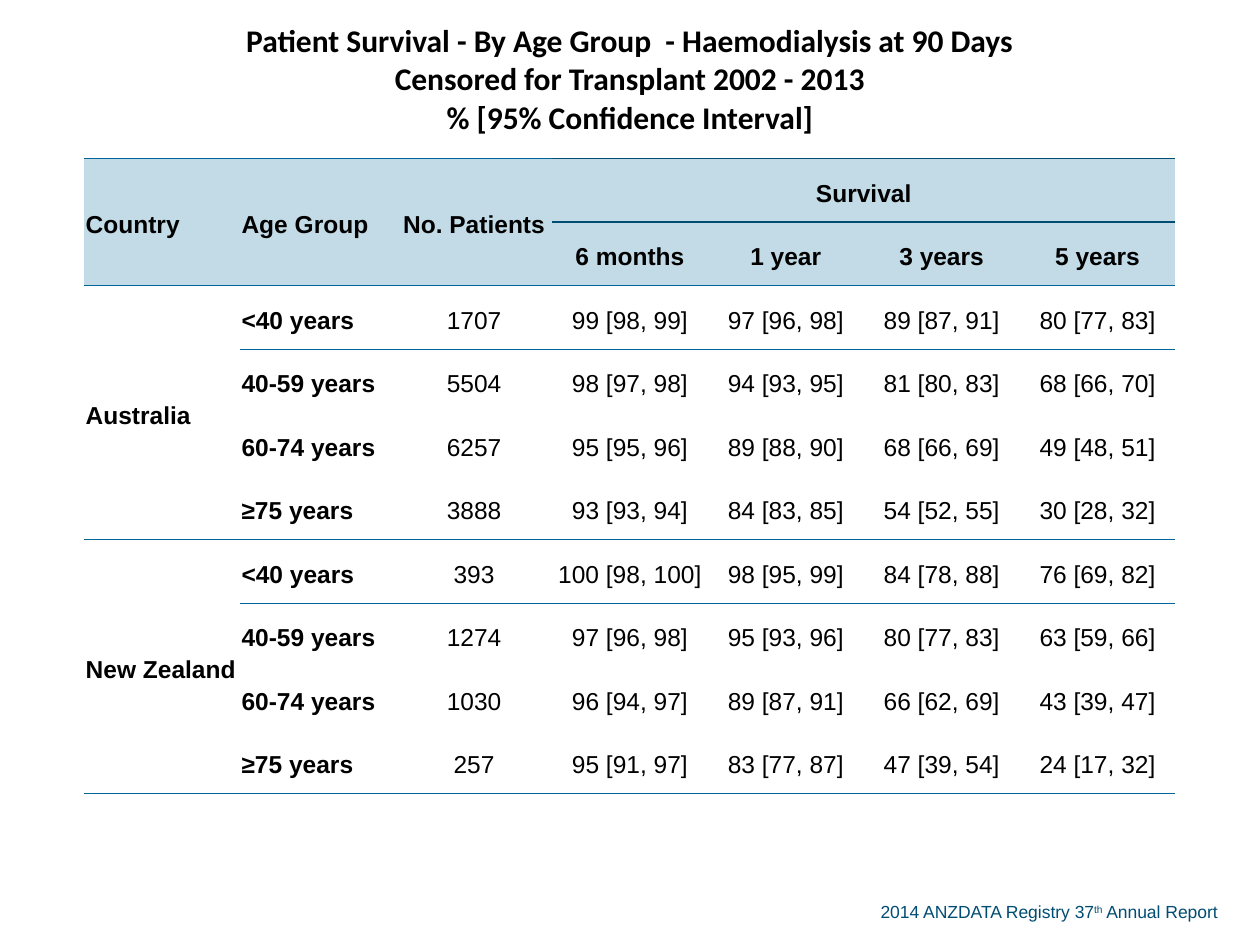
from dataclasses import dataclass

from lxml import etree
from pptx import Presentation
from pptx.dml.color import RGBColor
from pptx.enum.text import MSO_ANCHOR, PP_ALIGN
from pptx.oxml.ns import qn
from pptx.util import Inches, Pt

LEFT, MID = PP_ALIGN.LEFT, PP_ALIGN.CENTER
CENTRE = MSO_ANCHOR.MIDDLE
BLACK = RGBColor(0x00, 0x00, 0x00)
BLUE = RGBColor(0x00, 0x66, 0x99)
NAVY = RGBColor(0x00, 0x4D, 0x73)
PALE = RGBColor(0xC2, 0xDB, 0xE7)
PLAIN = "{2D5ABB26-0587-4C30-8999-92F81FD0307C}"

WIDE, HIGH = Inches(10), Inches(7.5)
EDGE, SPAN = Inches(0.67), Inches(8.66)
ROWS, COLS = 11, 7
STEP = int(HIGH * 0.84 * 0.08)

TITLE = ("Patient Survival - By Age Group  - Haemodialysis at 90 Days\v"
         "Censored for Transplant 2002 - 2013\v% [95% Confidence Interval]")
HEADS = ("Country", "Age Group", "No. Patients", "Survival")
TIMES = ("6 months", "1 year", "3 years", "5 years")
AGES = ("<40 years", "40-59 years", "60-74 years", "≥75 years")


@dataclass(frozen=True)
class Band:
    """Rows held between two rules."""
    first: int
    last: int


@dataclass(frozen=True)
class Land:
    """A country with its patient counts and survival by age group."""
    name: str
    band: Band
    counts: tuple
    rates: tuple


HEAD = Band(1, 2)
LANDS = (
    Land("Australia", Band(3, 6), (1707, 5504, 6257, 3888), (
        ("99 [98, 99]", "97 [96, 98]", "89 [87, 91]", "80 [77, 83]"),
        ("98 [97, 98]", "94 [93, 95]", "81 [80, 83]", "68 [66, 70]"),
        ("95 [95, 96]", "89 [88, 90]", "68 [66, 69]", "49 [48, 51]"),
        ("93 [93, 94]", "84 [83, 85]", "54 [52, 55]", "30 [28, 32]"))),
    Land("New Zealand", Band(7, 10), (393, 1274, 1030, 257), (
        ("100 [98, 100]", "98 [95, 99]", "84 [78, 88]", "76 [69, 82]"),
        ("97 [96, 98]", "95 [93, 96]", "80 [77, 83]", "63 [59, 66]"),
        ("96 [94, 97]", "89 [87, 91]", "66 [62, 69]", "43 [39, 47]"),
        ("95 [91, 97]", "83 [77, 87]", "47 [39, 54]", "24 [17, 32]"))),
)
BANDS = (Band(0, 0), HEAD) + tuple(land.band for land in LANDS)


def rule(cell, side: str, color: RGBColor, size: float) -> None:
    """Draw one border of a cell."""
    line = etree.SubElement(cell._tc.get_or_add_tcPr(), qn(f"a:{side}"), w=str(Pt(size)))
    fill = etree.SubElement(line, qn("a:solidFill"))
    etree.SubElement(fill, qn("a:srgbClr"), val=str(color))


def frame(grid) -> None:
    """Rule the bands and fill the cells."""
    for band in BANDS:
        for row in range(band.first, band.last + 1):
            for col in range(COLS):
                cell = grid.cell(row, col)
                deep = cell.span_height if cell.is_merge_origin else 1
                if row == band.first and row > 0:
                    dark = row == HEAD.first and col > 2
                    rule(cell, "lnT", NAVY if dark else BLUE, 1 if dark else 0.5)
                if row + deep - 1 == band.last:
                    rule(cell, "lnB", BLUE, 0.5)
                if band == HEAD:
                    cell.fill.solid()
                    cell.fill.fore_color.rgb = PALE
                else:
                    cell.fill.background()


def write(grid, row: int, col: int, text: str) -> None:
    """Put text in a cell in the style of its place."""
    cell = grid.cell(row, col)
    cell.text = text
    cell.vertical_anchor = CENTRE
    cell.margin_left = cell.margin_right = cell.margin_top = Inches(0.01)
    cell.margin_bottom = 0
    para = cell.text_frame.paragraphs[0]
    para.alignment = LEFT if row and col < 2 else MID
    if row:
        para.line_spacing = 1.19
        para.space_after = Pt(14)
    font = para.font
    font.name, font.size = ("Arial", Pt(14)) if row else ("Calibri", Pt(18))
    font.bold = row <= HEAD.last or col < 2
    font.color.rgb = BLACK


def join(grid, top: int, left: int, low: int, right: int) -> None:
    """Merge a block of cells."""
    grid.cell(top, left).merge(grid.cell(low, right))


def chart(slide) -> None:
    """Build the survival table."""
    grid = slide.shapes.add_table(ROWS, COLS, EDGE, 0, SPAN, int(STEP * 12.5)).table
    grid.first_row = grid.horz_banding = False
    grid._tbl.tblPr.find(qn("a:tableStyleId")).text = PLAIN
    for col in grid.columns:
        col.width = SPAN // COLS
    for pos, row in enumerate(grid.rows):
        row.height = STEP if pos else int(STEP * 2.5)
    join(grid, 0, 0, 0, COLS - 1)
    join(grid, HEAD.first, 3, HEAD.first, COLS - 1)
    for col in range(3):
        join(grid, HEAD.first, col, HEAD.last, col)
    for land in LANDS:
        join(grid, land.band.first, 0, land.band.last, 0)
    frame(grid)
    write(grid, 0, 0, TITLE)
    for col, text in enumerate(HEADS):
        write(grid, HEAD.first, col, text)
    for col, text in enumerate(TIMES, 3):
        write(grid, HEAD.last, col, text)
    for land in LANDS:
        write(grid, land.band.first, 0, land.name)
        lines = zip(AGES, land.counts, land.rates)
        for row, (age, count, rates) in enumerate(lines, land.band.first):
            for col, text in enumerate((age, str(count), *rates), 1):
                write(grid, row, col, text)


def credit(slide) -> None:
    """Add the report line at the foot."""
    box = slide.shapes.add_textbox(Inches(6.89), Inches(7.1), Inches(2.99), Inches(0.27))
    box.text_frame.word_wrap = True
    para = box.text_frame.paragraphs[0]
    for text in ("2014 ANZDATA Registry 37", "th", " Annual Report"):
        run = para.add_run()
        run.text = text
        if text == "th":
            run.font._element.set("baseline", "30000")
    para.font.name, para.font.size = "Arial", Pt(10)
    para.font.color.rgb = NAVY


def main() -> None:
    """Make the slide and save it."""
    deck = Presentation()
    deck.slide_width, deck.slide_height = WIDE, HIGH
    slide = deck.slides.add_slide(deck.slide_layouts[6])
    credit(slide)
    chart(slide)
    deck.save("out.pptx")


if __name__ == "__main__":
    main()
